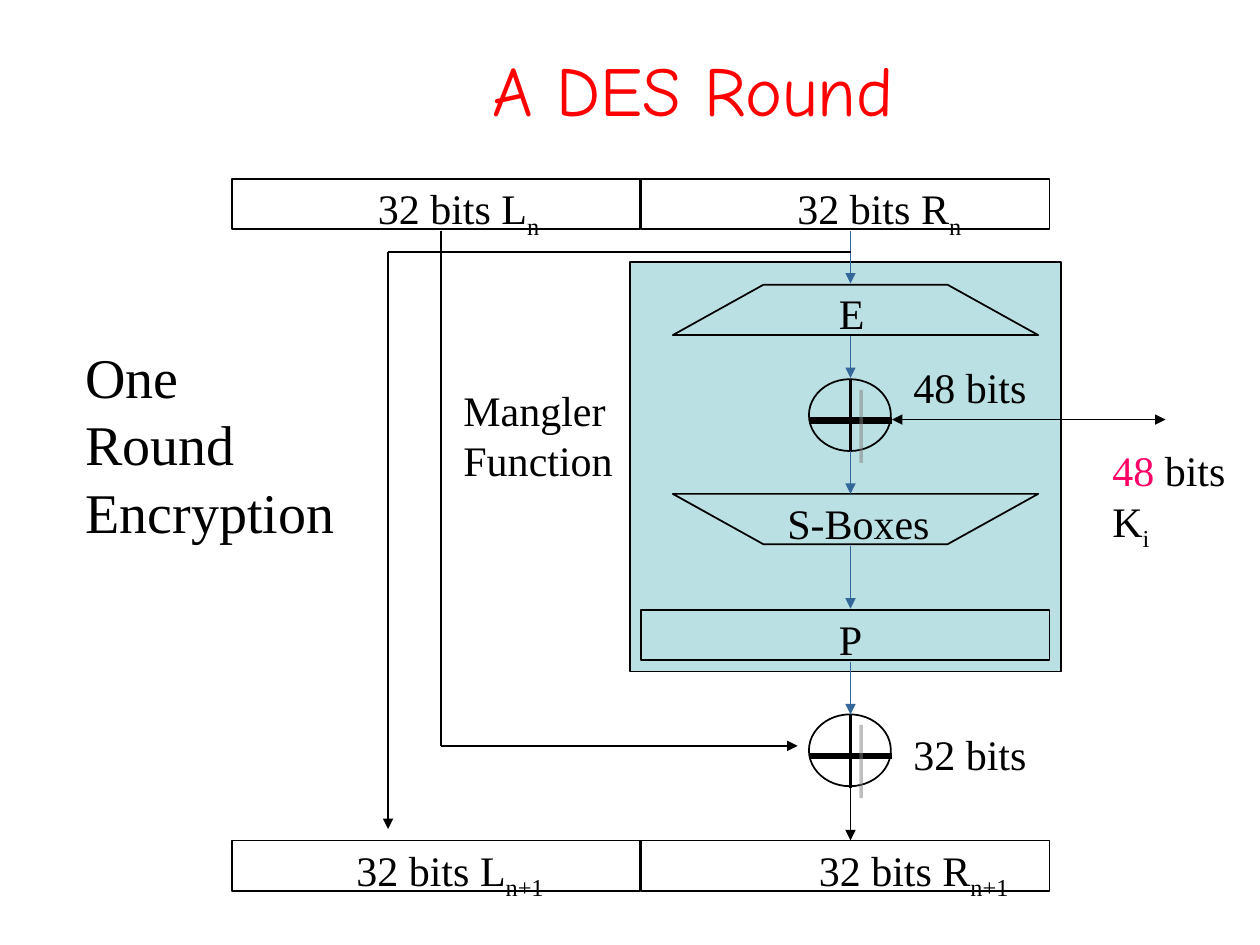
from lxml.etree import SubElement
from pptx import Presentation
from pptx.dml.color import RGBColor
from pptx.enum.shapes import MSO_CONNECTOR, MSO_SHAPE
from pptx.enum.text import MSO_ANCHOR, MSO_AUTO_SIZE, PP_ALIGN
from pptx.oxml.ns import qn
from pptx.util import Pt

PX = 9144
COLORS = {
    "ink": "000000",
    "panel": "BBE0E3",
    "title": "FF0000",
    "key": "FF0066",
    "flow": "336699",
    "shadow": "808080",
}
SPINE = 675
BAR_H = 40


def rgb(name):
    return RGBColor.from_string(COLORS[name])


def apply(obj, fmt):
    for name, value in fmt.items():
        setattr(obj, name, value)


def place(sp, box):
    apply(sp, dict(zip(("left", "top", "width", "height"), (v * PX for v in box))))


def outline(sp, fill=None):
    sp.shadow.inherit = False
    if fill:
        sp.fill.solid()
        sp.fill.fore_color.rgb = rgb(fill)
    else:
        sp.fill.background()
    sp.line.color.rgb = rgb("ink")
    sp.line.width = Pt(1)


def add_box(s, box, shape=MSO_SHAPE.RECTANGLE, fill=None):
    outline(s.shapes.add_shape(shape, *(v * PX for v in box)), fill)


def add_polygon(s, points):
    fb = s.shapes.build_freeform(*points[0], scale=PX)
    fb.add_line_segments(points[1:], close=True)
    outline(fb.convert_to_shape())


def add_line(s, start, end, color="ink", width=1, ends=(), shadow=False):
    ln = s.shapes.add_connector(MSO_CONNECTOR.STRAIGHT, *(v * PX for v in start + end))
    ln.line.color.rgb = rgb(color)
    ln.line.width = Pt(width)
    for tag in ends:
        SubElement(ln.line._get_or_add_ln(), qn(f"a:{tag}"), type="triangle")
    effects = SubElement(ln._element.spPr, qn("a:effectLst"))
    if shadow:
        outer = SubElement(effects, qn("a:outerShdw"), blurRad="0",
                           dist=str(Pt(8.5)), dir="2700000", algn="ctr", rotWithShape="0")
        clr = SubElement(outer, qn("a:srgbClr"), val=COLORS["shadow"])
        SubElement(clr, qn("a:alpha"), val="50000")


def add_arrow(s, start, end, color="ink"):
    add_line(s, start, end, color, ends=("tailEnd",))


def add_run(p, text, size=24, color="ink", font="Times New Roman", sub=False):
    r = p.add_run()
    r.text = text
    apply(r.font, {"name": font, "size": Pt(size)})
    r.font.color.rgb = rgb(color)
    if sub:
        r._r.get_or_add_rPr().set("baseline", "-25000")


def add_text(s, box, lines, size=24, wrap=False):
    tf = s.shapes.add_textbox(*(v * PX for v in box)).text_frame
    apply(tf, {"word_wrap": wrap, "auto_size": MSO_AUTO_SIZE.SHAPE_TO_FIT_TEXT})
    for i, runs in enumerate(lines):
        p = tf.add_paragraph() if i else tf.paragraphs[0]
        for text, fmt in runs:
            add_run(p, text, size, **fmt)


def add_title(s, box):
    place(s.shapes.title, box)
    tf = s.shapes.title.text_frame
    apply(tf, {"word_wrap": True, "auto_size": MSO_AUTO_SIZE.NONE,
               "vertical_anchor": MSO_ANCHOR.MIDDLE})
    p = tf.paragraphs[0]
    apply(p, {"alignment": PP_ALIGN.CENTER, "space_before": Pt(12), "space_after": Pt(3)})
    add_run(p, "A DES Round", 40, "title", "Comic Neue")


def add_registers(s, box, index, text_boxes):
    x, y, w, h = box
    for i, (half, (dx, text_w)) in enumerate(zip("LR", text_boxes)):
        add_box(s, (x + i * (w + 1), y, w, h))
        label = [(f"32 bits {half}", {}), (index, {"sub": True})]
        add_text(s, (x + dx, y - 2, text_w, 56), [label], wrap=True)


def add_trapezoid(s, box, wide_top=False):
    x, y, w, h = box
    wide, narrow = (y, y + h) if wide_top else (y + h, y)
    inset = w // 4
    add_polygon(s, [(x, wide), (x + inset, narrow), (x + w - inset, narrow), (x + w, wide)])


def add_xor(s, box):
    x, y, w, h = box
    add_box(s, box, MSO_SHAPE.OVAL)
    add_line(s, (x, y + 33), (x + w + 1, y + 33), width=4)
    add_line(s, (SPINE, y), (SPINE, y + h + 1), width=2, shadow=True)


def add_mangler(s, box):
    x, y, w, h = box
    add_box(s, box, fill="panel")
    add_trapezoid(s, (x + 34, y + 18, 290, BAR_H))
    add_trapezoid(s, (x + 34, y + 184, 290, BAR_H), wide_top=True)
    add_box(s, (x + 9, y + 276, 324, BAR_H))
    add_xor(s, (x + 142, y + 93, 65, 57))
    for label, dx, dy, text_w in (("E", 156, 15, 41), ("S-Boxes", 115, 182, 133),
                                  ("P", 156, 274, 39), ("48 bits", 215, 74, 110)):
        add_text(s, (x + dx, y + dy, text_w, 50), [[(label, {})]])


def add_wires(s):
    for top, bottom in ((183, 225), (267, 300), (358, 392), (433, 483), (525, 567)):
        add_arrow(s, (SPINE, top), (SPINE, bottom), "flow")
    add_arrow(s, (SPINE, 625), (SPINE, 667))
    add_line(s, (925, 333), (708, 333), ends=("headEnd", "tailEnd"))
    add_line(s, (SPINE, 200), (308, 200))
    add_arrow(s, (308, 200), (308, 658))
    add_line(s, (350, 183), (350, 592))
    add_arrow(s, (350, 592), (633, 592))


def add_side_labels(s):
    add_text(s, (715, 573, 110, 50), [[("32 bits", {})]])
    add_text(s, (873, 348, 110, 96), [[("48", {"color": "key"}), (" bits", {})],
                                      [("K", {}), ("i", {"sub": True})]])
    add_text(s, (58, 267, 222, 277), [[("One Round", {})], [("Encryption", {})]], 32, True)
    add_text(s, (358, 300, 144, 90), [[("Mangler", {})], [("Function", {})]])


def main():
    prs = Presentation()
    apply(prs, {"slide_width": 1000 * PX, "slide_height": 750 * PX})
    s = prs.slides.add_slide(prs.slide_layouts[5])
    add_title(s, (125, 8, 850, 125))
    add_mangler(s, (500, 208, 342, 325))
    add_registers(s, (184, 142, 324, BAR_H), "n", ((106, 182), (439, 183)))
    add_registers(s, (184, 667, 324, BAR_H), "n+1", ((89, 197), (456, 202)))
    add_xor(s, (642, 567, 65, 57))
    add_wires(s)
    add_side_labels(s)
    prs.save("out.pptx")


if __name__ == "__main__":
    main()
